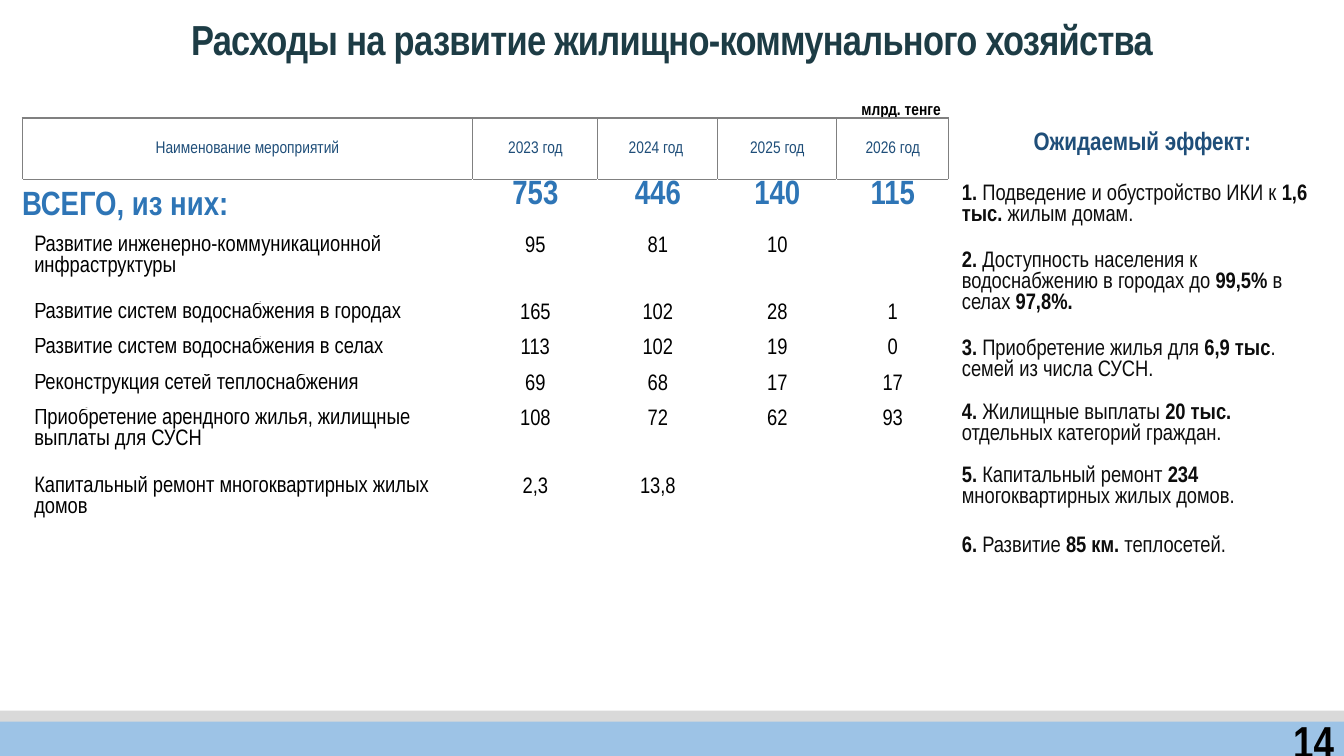
"""Build the slide on spending for housing and utilities development."""
from dataclasses import dataclass

from lxml import etree
from pptx import Presentation
from pptx.dml.color import RGBColor
from pptx.enum.shapes import MSO_SHAPE
from pptx.enum.text import MSO_ANCHOR, PP_ALIGN
from pptx.oxml.ns import qn
from pptx.util import Inches, Pt

LEFT, CENTER, RIGHT = PP_ALIGN.LEFT, PP_ALIGN.CENTER, PP_ALIGN.RIGHT
TOP, MIDDLE = MSO_ANCHOR.TOP, MSO_ANCHOR.MIDDLE
RECTANGLE = MSO_SHAPE.RECTANGLE

FONT = "Arial Narrow"
BLACK = RGBColor(0x00, 0x00, 0x00)
INK = RGBColor(0x0D, 0x0D, 0x0D)
TEAL = RGBColor(0x1D, 0x3C, 0x45)
NAVY = RGBColor(0x1F, 0x4E, 0x79)
BLUE = RGBColor(0x2E, 0x75, 0xB6)
SKY = RGBColor(0x9D, 0xC3, 0xE6)
SILVER = RGBColor(0xD9, 0xD9, 0xD9)
GREY = RGBColor(0x80, 0x80, 0x80)

UNIT = Inches(0.01)
PAGE_COLUMNS, PAGE_ROWS = 1333, 750


@dataclass(frozen=True)
class Area:
    """A block of the page grid, in columns and rows."""
    left: int
    top: int
    width: int
    height: int

    def box(self) -> list[int]:
        """Return the block as slide lengths."""
        return [n * UNIT for n in (self.left, self.top, self.width, self.height)]


@dataclass(frozen=True)
class Style:
    """The look of a text and its place within a frame."""
    size: int
    color: RGBColor
    bold: bool = False
    align: PP_ALIGN = LEFT
    anchor: MSO_ANCHOR = MIDDLE
    insets: tuple[int, int, int, int] = (10, 5, 10, 5)
    spacing: float = 1.0
    tracking: float = 0


@dataclass(frozen=True)
class Bar:
    """A footer band with an optional text."""
    area: Area
    color: RGBColor
    text: str = ""


@dataclass(frozen=True)
class Label:
    """A free-standing text."""
    area: Area
    text: str
    style: Style


NAME_INSETS, VALUE_INSETS = (12, 0, 10, 0), (1, 1, 1, 0)
HEADER = Style(12, NAVY, align=CENTER)
TOTAL_NAME = Style(24, BLUE, True, insets=(0, 0, 10, 0))
TOTAL_VALUE = Style(24, BLUE, True, CENTER, TOP, VALUE_INSETS)
ITEM_NAME = Style(16, BLACK, anchor=TOP, insets=NAME_INSETS)
ITEM_VALUE = Style(16, BLACK, align=CENTER, anchor=TOP, insets=VALUE_INSETS)
EFFECT_HEADER = Style(18, NAVY, True, CENTER)
EFFECT = Style(16, INK, True)
PAGE_NUMBER = Style(32, BLACK, True, RIGHT)

BARS = (
    Bar(Area(0, 715, PAGE_COLUMNS, 40), SKY, "14"),
    Bar(Area(0, 705, PAGE_COLUMNS, 11), SILVER),
)
LABELS = (
    Label(Area(0, 4, PAGE_COLUMNS, 56), "Расходы на развитие жилищно-коммунального хозяйства",
          Style(30, TEAL, True, CENTER, TOP, spacing=1.1, tracking=-0.5)),
    Label(Area(823, 83, 120, 48), "млрд. тенге", Style(12, BLACK, True, RIGHT, spacing=1.1)),
)

EFFECT_AREA = Area(944, 114, 378, 338)
EFFECT_ROWS = (58, 36, 62, 24, 62, 42, 54)
EFFECTS = (
    ("Ожидаемый эффект:",),
    ("1. ", "Подведение и обустройство ИКИ к ", "1,6 тыс.", " жилым домам."),
    ("2.", " Доступность населения к водоснабжению в городах до ", "99,5%", " в селах ", "97,8%."),
    ("3.", " Приобретение жилья для ", "6,9 тыс", ". семей из числа СУСН."),
    ("4. ", "Жилищные выплаты ", "20 тыс. ", "отдельных категорий граждан."),
    ("5.", " Капитальный ремонт ", "234 ", "многоквартирных жилых домов."),
    ("6. ", "Развитие ", "85 км. ", "теплосетей."),
)

COST_AREA = Area(22, 117, 919, 455)
COST_COLUMNS = (447, 124, 119, 118, 111)
COST_ROWS = (61, 55, 67, 35, 35, 35, 67, 100)
COSTS = (
    ("Наименование мероприятий", "2023 год", "2024 год ", "2025 год", "2026 год"),
    ("ВСЕГО, из них:", "753", "446", "140", "115"),
    ("Развитие инженерно-коммуникационной инфраструктуры", "95", "81", "10", ""),
    ("Развитие систем водоснабжения в городах", "165", "102", "28", "1"),
    ("Развитие систем водоснабжения в селах", "113", "102", "19", "0"),
    ("Реконструкция сетей теплоснабжения", "69", "68", "17", "17"),
    ("Приобретение арендного жилья, жилищные выплаты для СУСН", "108", "72", "62", "93"),
    ("Капитальный ремонт многоквартирных жилых домов", "2,3", "13,8", "", ""),
)


def write(frame, spans: tuple[str, ...], style: Style) -> None:
    """Write spans whose weight alternates, starting with the style's own."""
    para = frame.paragraphs[0]
    para.text = spans[0]
    for text in spans[1:]:
        para.add_run().text = text
    para.alignment = style.align
    para.line_spacing = style.spacing
    for index, span in enumerate(para.runs):
        font = span.font
        font.name, font.size = FONT, Pt(style.size)
        font.bold = style.bold and index % 2 == 0
        font.color.rgb = style.color
        if style.tracking:
            font._element.set("spc", str(round(style.tracking * 100)))


def draw_bar(page, bar: Bar) -> None:
    """Draw a footer band."""
    shape = page.shapes.add_shape(RECTANGLE, *bar.area.box())
    shape.shadow.inherit = False
    shape.fill.solid()
    shape.fill.fore_color.rgb = bar.color
    shape.line.fill.background()
    if bar.text:
        shape.text_frame.vertical_anchor = PAGE_NUMBER.anchor
        write(shape.text_frame, (bar.text,), PAGE_NUMBER)


def draw_label(page, label: Label) -> None:
    """Draw a free-standing text."""
    frame = page.shapes.add_textbox(*label.area.box()).text_frame
    frame.word_wrap = True
    frame.vertical_anchor = label.style.anchor
    write(frame, (label.text,), label.style)


def draw_grid(page, area: Area, columns: tuple[int, ...], rows: tuple[int, ...]):
    """Add a plain table with the given column and row sizes."""
    table = page.shapes.add_table(len(rows), len(columns), *area.box()).table
    table.first_row = table.horz_banding = False
    for column, width in zip(table.columns, columns):
        column.width = width * UNIT
    for row, height in zip(table.rows, rows):
        row.height = height * UNIT
    return table


def fill_cell(cell, spans: tuple[str, ...], style: Style) -> None:
    """Write a cell and place its text."""
    cell.fill.background()
    insets = [n * UNIT for n in style.insets]
    cell.margin_left, cell.margin_top, cell.margin_right, cell.margin_bottom = insets
    cell.vertical_anchor = style.anchor
    write(cell.text_frame, spans, style)


def outline_cell(cell, sides: str) -> None:
    """Draw a thin grey line along the given sides of a cell."""
    properties = cell._tc.get_or_add_tcPr()
    for index, side in enumerate(sides):
        line = etree.Element(qn(f"a:ln{side}"), w=str(Pt(1)))
        fill = etree.SubElement(line, qn("a:solidFill"))
        etree.SubElement(fill, qn("a:srgbClr"), val=str(GREY))
        properties.insert(index, line)


def draw_effects(page) -> None:
    """Draw the list of expected effects."""
    table = draw_grid(page, EFFECT_AREA, (EFFECT_AREA.width,), EFFECT_ROWS)
    for row, spans in enumerate(EFFECTS):
        fill_cell(table.cell(row, 0), spans, EFFECT if row else EFFECT_HEADER)


def draw_costs(page) -> None:
    """Draw the table of spending by year."""
    table = draw_grid(page, COST_AREA, COST_COLUMNS, COST_ROWS)
    styles = {0: (HEADER, HEADER), 1: (TOTAL_NAME, TOTAL_VALUE)}
    borders = {0: "LRTB", 1: "T"}
    for row, texts in enumerate(COSTS):
        name_style, value_style = styles.get(row, (ITEM_NAME, ITEM_VALUE))
        for column, text in enumerate(texts):
            cell = table.cell(row, column)
            fill_cell(cell, (text,), value_style if column else name_style)
            outline_cell(cell, borders.get(row, ""))


def main() -> None:
    """Build and save the deck."""
    deck = Presentation()
    deck.slide_width, deck.slide_height = PAGE_COLUMNS * UNIT, PAGE_ROWS * UNIT
    page = deck.slides.add_slide(deck.slide_layouts[6])
    for bar in BARS:
        draw_bar(page, bar)
    for label in LABELS:
        draw_label(page, label)
    draw_effects(page)
    draw_costs(page)
    deck.save("out.pptx")


if __name__ == "__main__":
    main()
